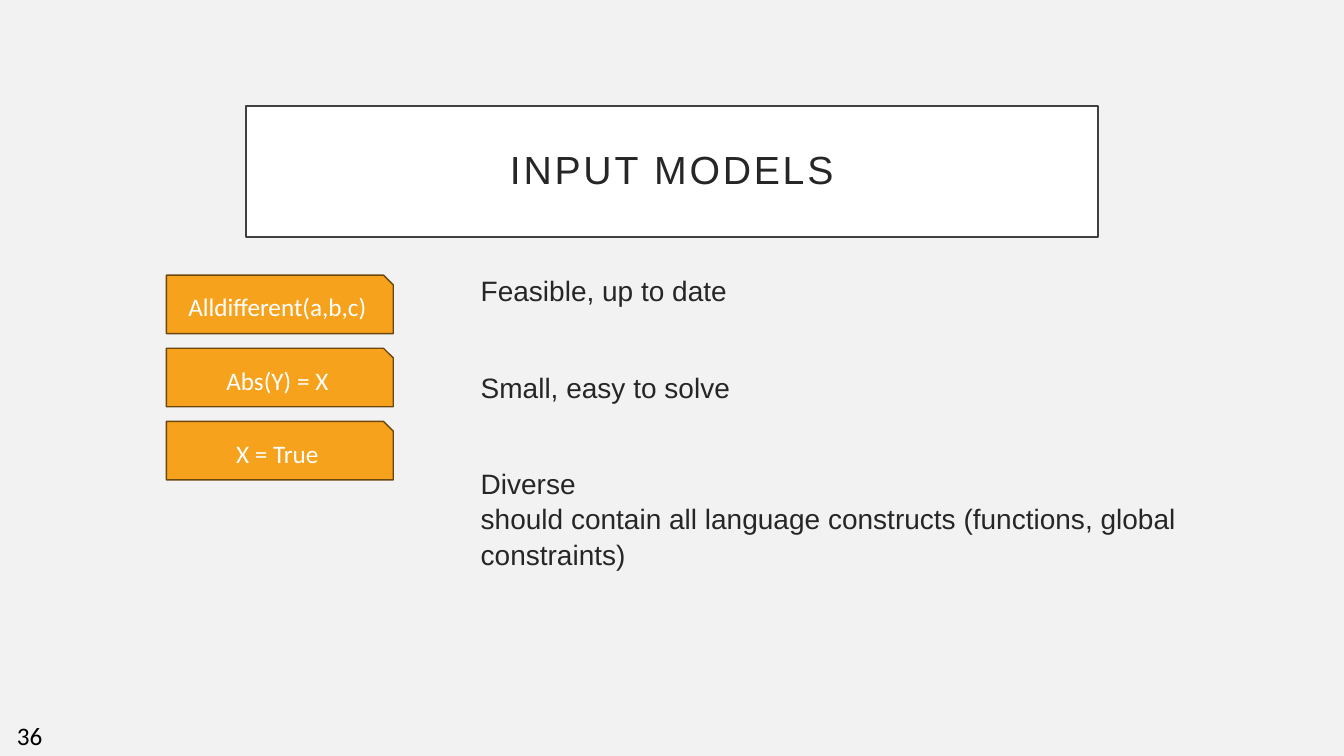
"""Build the slide on input models with three sample constraints."""
from dataclasses import dataclass

from pptx import Presentation
from pptx.dml.color import RGBColor
from pptx.enum.shapes import MSO_SHAPE
from pptx.enum.text import MSO_ANCHOR, MSO_AUTO_SIZE, PP_ALIGN
from pptx.util import Inches, Pt


@dataclass(frozen=True)
class Theme:
    background: str = "F2F2F2"
    panel: str = "FFFFFF"
    panel_line: str = "404040"
    ink: str = "262626"
    number: str = "000000"
    chip: str = "F6A21D"
    chip_line: str = "6C470D"
    chip_text: str = "FFFFFF"
    text_font: str = "Arial"
    label_font: str = "Calibri"
    title_size: int = 28
    body_size: int = 20
    label_size: int = 18


theme = Theme()
deck = Presentation()
deck.slide_width, deck.slide_height = Inches(13.333), Inches(7.5)


def area(left, top, width, height):
    """Turn percentages of the slide's size into lengths."""
    column, row = deck.slide_width / 100, deck.slide_height / 100
    return int(left * column), int(top * row), int(width * column), int(height * row)


def style(para, font, size, color):
    """Format every run of a paragraph."""
    for span in para.runs:
        span.font.name = font
        span.font.size = Pt(size)
        span.font.color.rgb = RGBColor.from_string(color)


page = deck.slides.add_slide(deck.slide_layouts[5])
page.background.fill.solid()
page.background.fill.fore_color.rgb = RGBColor.from_string(theme.background)

number = page.shapes.add_textbox(*area(0.53, 94.67, 4.05, 5.33))
number.text_frame.text = "36"
style(number.text_frame.paragraphs[0], theme.label_font, theme.label_size, theme.number)

title = page.shapes.title
title.left, title.top, title.width, title.height = area(18.3, 14, 63.38, 17.33)
title.fill.solid()
title.fill.fore_color.rgb = RGBColor.from_string(theme.panel)
title.line.color.rgb = RGBColor.from_string(theme.panel_line)
title.line.width = Pt(1.5)
frame = title.text_frame
frame.text = "INPUT MODELS"
frame.auto_size = MSO_AUTO_SIZE.NONE
frame.vertical_anchor = MSO_ANCHOR.MIDDLE
frame.margin_left = frame.margin_right = Inches(0.2)
frame.margin_top = frame.margin_bottom = Inches(0.2)
para = frame.paragraphs[0]
para.alignment = PP_ALIGN.CENTER
para.line_spacing = 0.9
style(para, theme.text_font, theme.title_size, theme.ink)
para.runs[0].font._element.set("spc", "200")

qualities = [
    "Feasible, up to date",
    "Small, easy to solve",
    "Diverse\vshould contain all language constructs (functions, global constraints)",
]
body = page.shapes.add_textbox(*area(35.03, 35.33, 63.38, 45.2))
body.text_frame.word_wrap = True
for index, quality in enumerate(qualities):
    para = body.text_frame.add_paragraph() if index else body.text_frame.paragraphs[0]
    para.text = quality
    para.line_spacing = 1.05
    para.space_before = Pt(43.7 if index else 0)
    style(para, theme.text_font, theme.body_size, theme.ink)

constraints = ["Alldifferent(a,b,c)", "Abs(Y) = X", "X = True"]
for row, constraint in enumerate(constraints):
    chip = page.shapes.add_shape(
        MSO_SHAPE.SNIP_1_RECTANGLE, *area(12.38, 36.4 + 9.67 * row, 16.88, 7.73)
    )
    chip.shadow.inherit = False
    chip.fill.solid()
    chip.fill.fore_color.rgb = RGBColor.from_string(theme.chip)
    chip.line.color.rgb = RGBColor.from_string(theme.chip_line)
    chip.line.width = Pt(1)
    chip.text_frame.text = constraint
    chip.text_frame.vertical_anchor = MSO_ANCHOR.MIDDLE
    para = chip.text_frame.paragraphs[0]
    para.alignment = PP_ALIGN.CENTER
    style(para, theme.label_font, theme.label_size, theme.chip_text)

deck.save("out.pptx")
